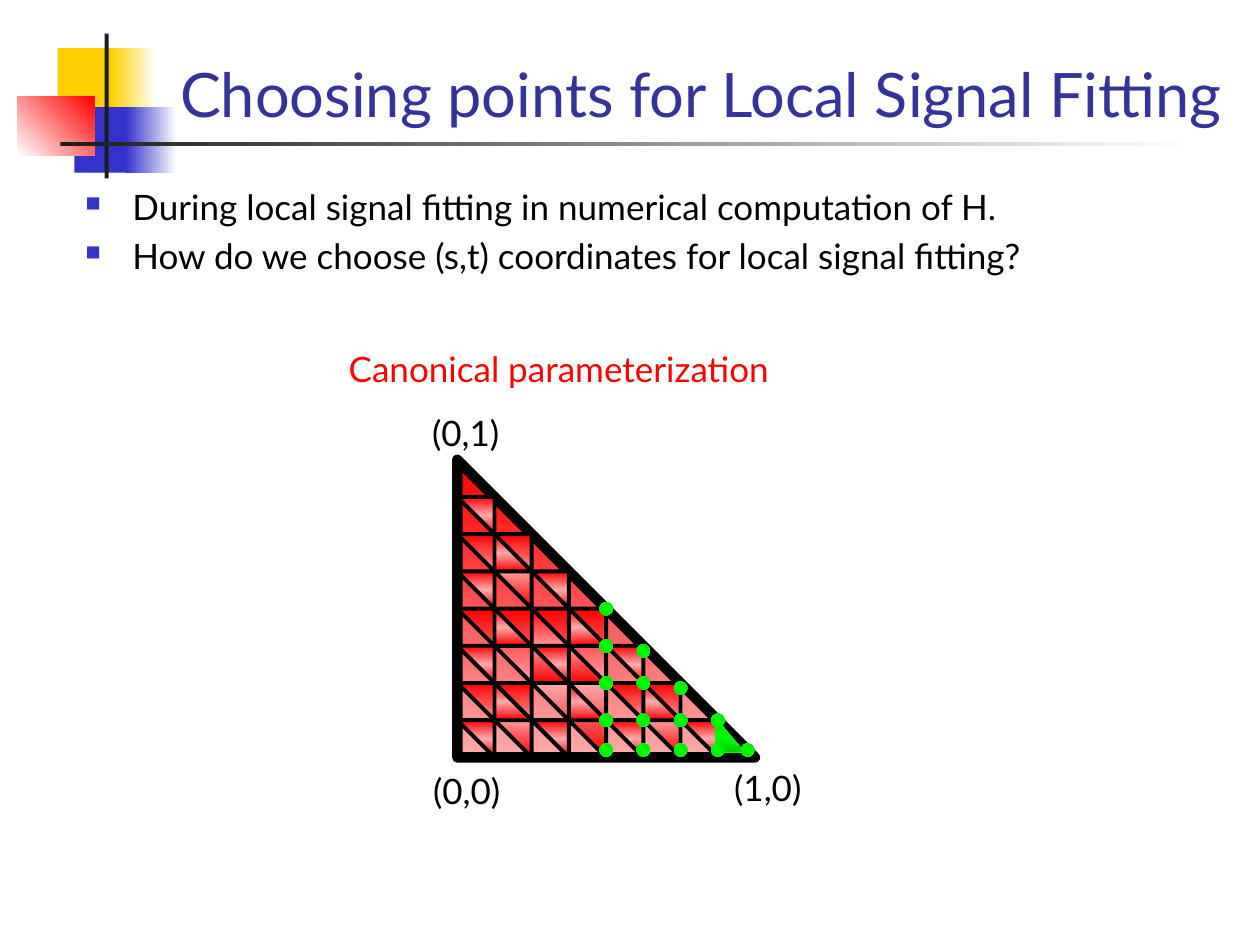
from dataclasses import dataclass
from typing import NamedTuple, Optional

from lxml.etree import SubElement
from pptx import Presentation
from pptx.dml.color import RGBColor
from pptx.enum.shapes import MSO_SHAPE as Preset
from pptx.enum.text import MSO_ANCHOR as Anchor
from pptx.oxml.ns import qn
from pptx.util import Cm, Pt


@dataclass(frozen=True)
class Theme:
    font: str = "Lato"
    title_size: float = 35
    text_size: float = 20
    title: str = "333399"
    text: str = "000000"
    accent: str = "FF0000"
    yellow: str = "FFCF01"
    blue: str = "3333CC"
    dark: str = "1C1C1C"
    white: str = "FFFFFF"
    red: str = "FF0000"
    pale_red: str = "FFAAAA"
    mid_red: str = "FF9898"
    edge: str = "000000"
    green: str = "00FF00"
    wedge_green: str = "00CD00"
    dot_green: str = "00C400"


THEME = Theme()


class Box(NamedTuple):
    """Left, top, width and height in centimetres."""
    left: float
    top: float
    width: float
    height: float


class Fill(NamedTuple):
    """One colour, or evenly spread gradient colours with a clockwise angle."""
    colors: tuple[str, ...]
    angle: int = 0


class Line(NamedTuple):
    color: str
    width: float


class Triangle(NamedTuple):
    column: int
    row: int
    size: int
    inverted: bool = False


class Label(NamedTuple):
    text: str
    box: Box


# The canonical triangle is a lattice of 8 by 8 cells
CELLS = 8
CELL = 0.75
GRID_LEFT, GRID_TOP = 9.22, 9.27
FIRST_DOT_COLUMN = 4
DOT_SIZE = 0.27
BORDER_INSET = 0.15
DIAGONAL_NUDGE = {5: 0.1, 6: 0.1}

DECORATION = [
    (Box(1.17, 0.97, 1.22, 1.32), Fill((THEME.yellow,))),
    (Box(2.24, 0.97, 0.91, 1.32), Fill((THEME.yellow, THEME.white))),
    (Box(1.5, 2.16, 1.17, 1.32), Fill((THEME.blue,))),
    (Box(2.54, 2.16, 1.02, 1.32), Fill((THEME.blue, THEME.white))),
    (Box(0.35, 1.95, 1.55, 1.18), Fill((THEME.white, THEME.red), 315)),
    (Box(2.11, 0.68, 0.08, 2.92), Fill((THEME.dark,))),
    (Box(1.22, 2.87, 22.86, 0.08), Fill((THEME.dark, THEME.white))),
]

CORNERS = [
    Label("(0,0)", Box(8.48, 15.39, 2.18, 1.09)),
    Label("(1,0)", Box(14.55, 15.32, 2.18, 1.09)),
    Label("(0,1)", Box(8.46, 8.18, 2.18, 1.09)),
]


def add_filled(slide, preset, box: Box, fill: Fill, line: Optional[Line] = None):
    shape = slide.shapes.add_shape(preset, *map(Cm, box))
    shape.shadow.inherit = False
    if len(fill.colors) == 1:
        shape.fill.solid()
        shape.fill.fore_color.rgb = RGBColor.from_string(fill.colors[0])
    else:
        shape.fill.gradient()
        shape.fill.gradient_angle = (360 - fill.angle) % 360
        stops = shape._element.spPr.find(qn("a:gradFill")).find(qn("a:gsLst"))
        for stop in list(stops):
            stops.remove(stop)
        for index, color in enumerate(fill.colors):
            position = 100000 * index // (len(fill.colors) - 1)
            stop = SubElement(stops, qn("a:gs"), pos=str(position))
            SubElement(stop, qn("a:srgbClr"), val=color)
    if line:
        shape.line.color.rgb = RGBColor.from_string(line.color)
        shape.line.width = Pt(line.width)
    else:
        shape.line.fill.background()
    return shape


def add_bullet(paragraph, color: str, indent: float) -> None:
    properties = paragraph._p.get_or_add_pPr()
    properties.set("marL", str(Cm(indent)))
    properties.set("indent", str(-Cm(indent)))
    bullet_color = SubElement(properties, qn("a:buClr"))
    SubElement(bullet_color, qn("a:srgbClr"), val=color)
    SubElement(properties, qn("a:buSzPct"), val="60000")
    SubElement(properties, qn("a:buChar"), char="■")


def add_text(slide, text: str, box: Box, *, size: float = THEME.text_size,
             color: str = THEME.text, anchor=Anchor.TOP, line_spacing: float = 1.0,
             space_after: float = 0, bullet_color: Optional[str] = None) -> None:
    frame = slide.shapes.add_textbox(*map(Cm, box)).text_frame
    frame.word_wrap = True
    frame.vertical_anchor = anchor
    frame.text = text
    for paragraph in frame.paragraphs:
        paragraph.line_spacing = line_spacing
        paragraph.space_after = Pt(space_after)
        font = paragraph.runs[0].font
        font.name = THEME.font
        font.size = Pt(size)
        font.color.rgb = RGBColor.from_string(color)
        if bullet_color:
            add_bullet(paragraph, bullet_color, 0.95)


def subdivide(triangle: Triangle) -> tuple[Triangle, list[Triangle]]:
    """Return the middle triangle and the three around it."""
    column, row, size, inverted = triangle
    half = size // 2
    far_column, far_row = column + half, row + half
    if inverted:
        middle = Triangle(far_column, row, half)
        corners = [(column, row), (far_column, row), (far_column, far_row)]
    else:
        middle = Triangle(column, far_row, half, True)
        corners = [(column, row), (column, far_row), (far_column, far_row)]
    return middle, [Triangle(*corner, half, inverted) for corner in corners]


def add_triangle(slide, triangle: Triangle, fill: Fill, line: Line):
    side = triangle.size * CELL
    box = Box(GRID_LEFT + triangle.column * CELL,
              GRID_TOP + triangle.row * CELL, side, side)
    shape = add_filled(slide, Preset.RIGHT_TRIANGLE, box, fill, line)
    if triangle.inverted:
        transform = shape._element.spPr.find(qn("a:xfrm"))
        transform.set("flipH", "1")
        transform.set("flipV", "1")


def add_subdivided_triangle(slide) -> None:
    whole = Triangle(0, 0, CELLS)
    add_triangle(slide, whole, Fill((THEME.red, THEME.pale_red), 90),
                 Line(THEME.edge, 6))
    level = [whole]
    while level[0].size > 1:
        next_level = []
        for triangle in level:
            middle, corners = subdivide(triangle)
            light = THEME.mid_red if middle.size == 2 else THEME.pale_red
            add_triangle(slide, middle, Fill((THEME.red, light, THEME.red), 90),
                         Line(THEME.edge, 2.25))
            next_level += [middle, *corners]
        level = next_level


def add_sample_points(slide) -> None:
    fill = Fill((THEME.dot_green, THEME.green, THEME.dot_green), 90)
    for column in range(FIRST_DOT_COLUMN, CELLS + 1):
        for row in range(max(column, FIRST_DOT_COLUMN), CELLS + 1):
            left = GRID_LEFT + column * CELL - BORDER_INSET * (column == CELLS)
            top = GRID_TOP + row * CELL - BORDER_INSET * (row == CELLS)
            if row == column:
                top += DIAGONAL_NUDGE.get(column, 0)
            box = Box(left - DOT_SIZE / 2, top - DOT_SIZE / 2, DOT_SIZE, DOT_SIZE)
            dot = add_filled(slide, Preset.OVAL, box, fill, Line(THEME.green, 0.25))
            dot.rotation = 225


def main() -> None:
    presentation = Presentation()
    presentation.slide_width, presentation.slide_height = Cm(25.4), Cm(19.05)
    slide = presentation.slides.add_slide(presentation.slide_layouts[6])
    for box, fill in DECORATION:
        add_filled(slide, Preset.RECTANGLE, box, fill)
    add_text(slide, "Choosing points for Local Signal Fitting",
             Box(3.38, 0.84, 22.22, 1.9), size=THEME.title_size,
             color=THEME.title, anchor=Anchor.BOTTOM)
    add_text(slide, "During local signal fitting in numerical computation of H.\n"
             "How do we choose (s,t) coordinates for local signal fitting?",
             Box(1.47, 3.61, 23.29, 2.9), space_after=4, bullet_color=THEME.blue)
    add_text(slide, "Canonical parameterization", Box(6.78, 6.98, 9.98, 1.14),
             color=THEME.accent, line_spacing=0.9)
    add_subdivided_triangle(slide)
    for label in CORNERS:
        add_text(slide, label.text, label.box)
    add_filled(slide, Preset.RIGHT_TRIANGLE, Box(14.43, 14.48, 0.58, 0.69),
               Fill((THEME.wedge_green, THEME.green, THEME.wedge_green), 90),
               Line(THEME.green, 0.75))
    add_sample_points(slide)
    presentation.save("out.pptx")


if __name__ == "__main__":
    main()
